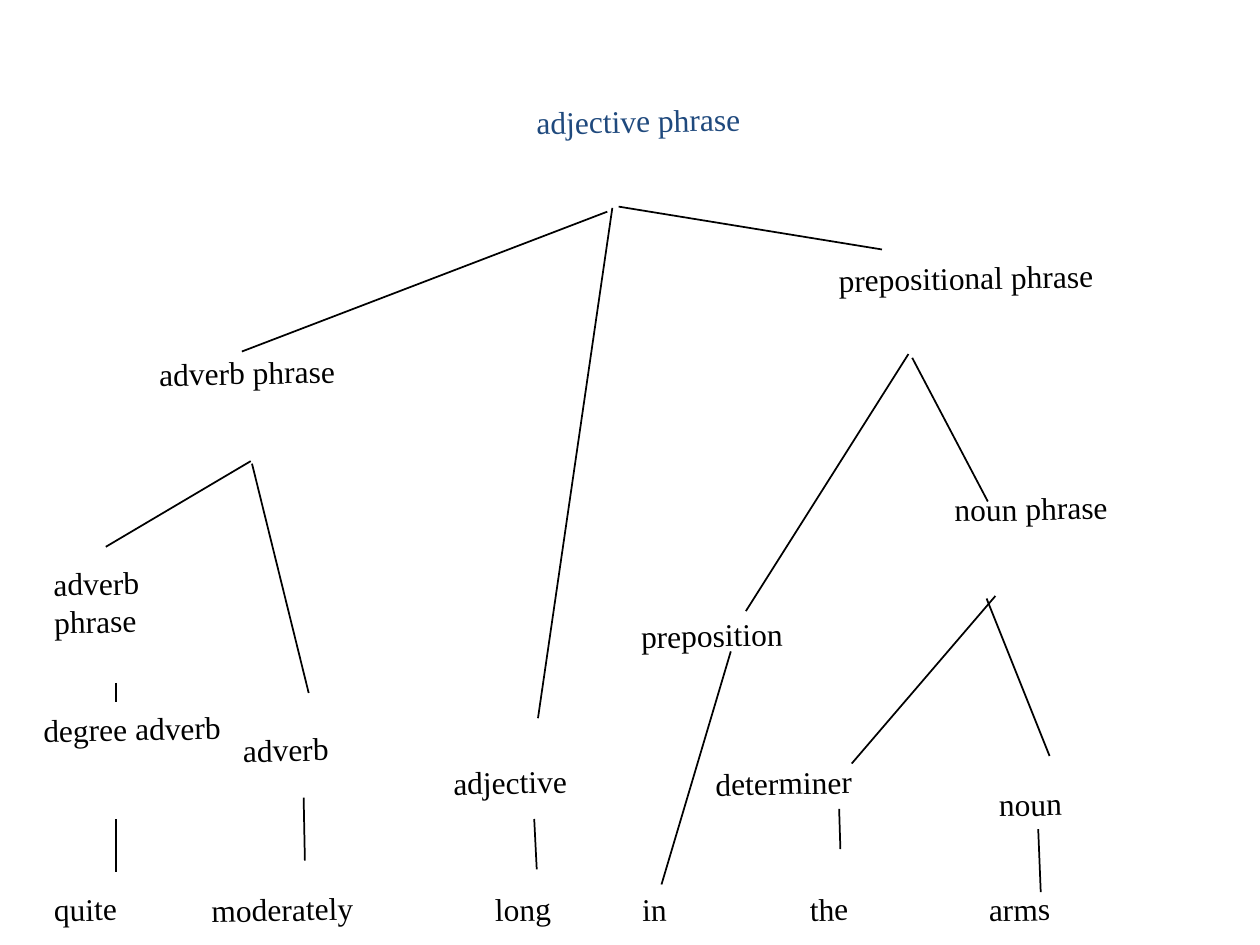
"""Build a phrase structure tree for the adjective phrase 'quite moderately long in the arms'."""
from lxml import etree
from pptx import Presentation
from pptx.dml.color import RGBColor
from pptx.enum.shapes import MSO_CONNECTOR
from pptx.enum.text import MSO_AUTO_SIZE
from pptx.oxml.ns import qn
from pptx.util import Inches, Pt

STRAIGHT = MSO_CONNECTOR.STRAIGHT
FIT_SHAPE = MSO_AUTO_SIZE.SHAPE_TO_FIT_TEXT
FONT = "Times New Roman"
BLACK = "000000"
BLUE = "1F497D"
TILT = -1.1
MARGIN = 0.1
INDENT = 0.16


def color(value):
    return RGBColor.from_string(value)


def add_label(slide, text, left, top, width, height, wrap=True, ink=BLACK, margin=MARGIN):
    shape = slide.shapes.add_textbox(Inches(left), Inches(top), Inches(width), Inches(height))
    shape.rotation = TILT
    frame = shape.text_frame
    frame.word_wrap = wrap
    frame.auto_size = FIT_SHAPE
    frame.margin_left = Inches(margin)
    run = frame.paragraphs[0].add_run()
    run.text = text
    run.font.name = FONT
    run.font.size = Pt(18)
    run.font.color.rgb = color(ink)


presentation = Presentation()
presentation.slide_width = Inches(10)
presentation.slide_height = Inches(7.5)
slide = presentation.slides.add_slide(presentation.slide_layouts[6])

branches = [
    ((4.82, 1.68), (1.92, 2.79)),
    ((4.86, 1.65), (4.27, 5.7)),
    ((4.91, 1.64), (7, 1.98)),
    ((1.99, 3.66), (0.84, 4.34)),
    ((2, 3.68), (2.45, 5.5)),
    ((7.21, 2.81), (5.92, 4.85)),
    ((7.24, 2.84), (7.84, 3.98)),
    ((7.9, 4.73), (6.76, 6.06)),
    ((7.83, 4.75), (8.33, 6)),
    ((0.92, 5.42), (0.92, 5.57)),
    ((0.92, 6.5), (0.92, 6.92)),
    ((2.41, 6.33), (2.42, 6.83)),
    ((4.24, 6.5), (4.26, 6.9)),
    ((5.8, 5.17), (5.25, 7.02)),
    ((6.66, 6.42), (6.67, 6.74)),
    ((8.24, 6.58), (8.26, 7.08)),
]
for start, end in branches:
    branch = slide.shapes.add_connector(STRAIGHT, *(Inches(value) for value in start + end))
    branch.line.width = Pt(1)
    branch.line.color.rgb = color(BLACK)
    etree.SubElement(branch._element.spPr, qn("a:effectLst"))

add_label(slide, "adjective phrase", 4.16, 0.75, 2.42, 0.5, ink=BLUE)
add_label(slide, "prepositional phrase", 6.5, 2, 2.59, 0.9, margin=INDENT)
add_label(slide, "noun phrase", 7.42, 3.83, 1.66, 0.9, margin=INDENT)
add_label(slide, "adjective", 3.5, 6, 1.4, 0.5, wrap=False)

categories = [
    ("adverb phrase", 1.17, 2.75, 1.96, 0.9),
    ("adverb phrase", 0.33, 4.42, 1.5, 0.9),
    ("degree adverb", 0.25, 5.58, 1.77, 0.9),
    ("adverb", 1.83, 5.74, 1.33, 0.5),
    ("preposition", 4.99, 4.83, 2.08, 0.5),
    ("determiner", 5.58, 6, 2.24, 0.5),
    ("noun", 7.83, 6.17, 1.48, 0.5),
]
for text, left, top, width, height in categories:
    add_label(slide, text, left, top, width, height)

words = [
    ("quite", 0.33, 0.86),
    ("moderately", 1.58, 1.69),
    ("long", 3.83, 0.79),
    ("in", 5, 0.46),
    ("the", 6.33, 0.6),
    ("arms", 7.75, 0.85),
]
for text, left, width in words:
    add_label(slide, text, left, 7.01, width, 0.5, wrap=False)

presentation.save("out.pptx")
